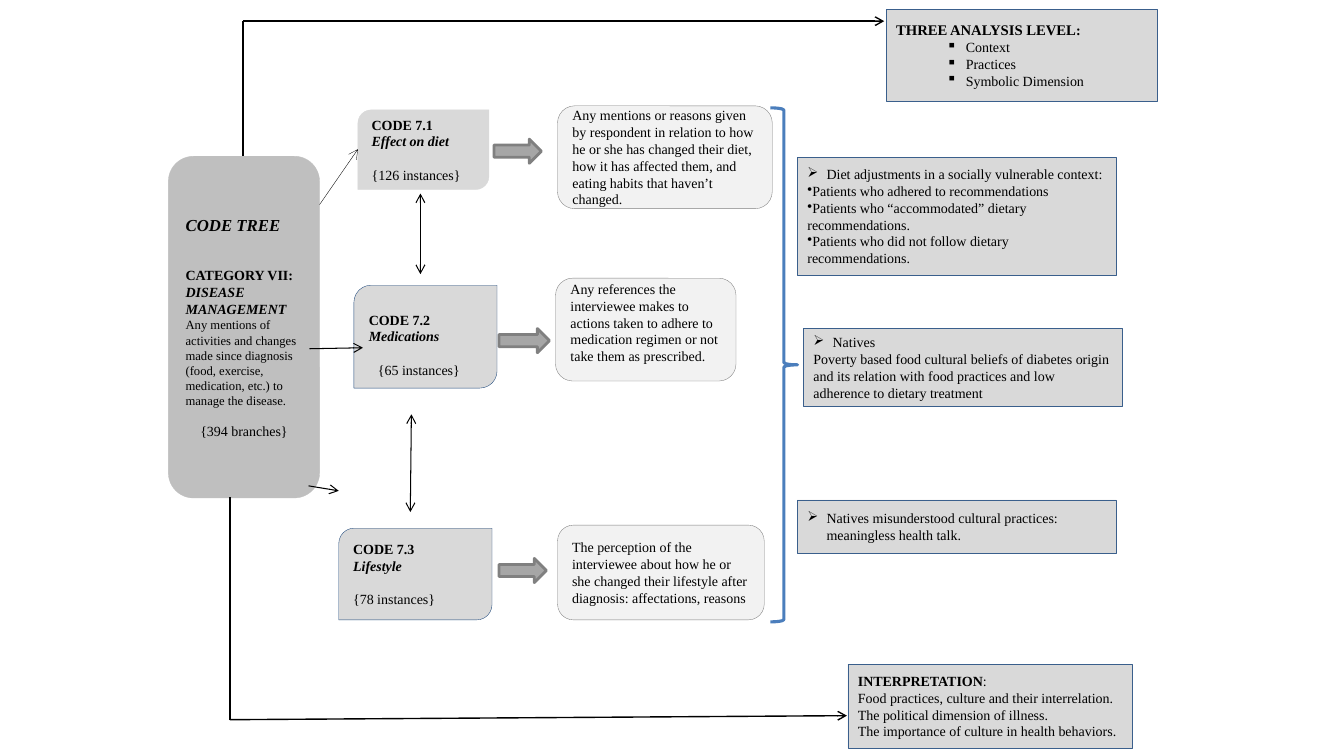
import pptx
import pptx.util
import pptx.dml.color
import pptx.enum.shapes
import pptx.enum.text
import pptx.oxml.ns
from lxml import etree

Inches, Pt, qn = pptx.util.Inches, pptx.util.Pt, pptx.oxml.ns.qn
SHAPE = pptx.enum.shapes.MSO_SHAPE
ALIGN = pptx.enum.text.PP_ALIGN


def paint(shape, line, width, fill=None):
    shape.line.color.rgb = pptx.dml.color.RGBColor.from_string(line)
    shape.line.width = Pt(width)
    if fill:
        shape.fill.solid()
        shape.fill.fore_color.rgb = pptx.dml.color.RGBColor.from_string(fill)
    etree.SubElement(shape._element.spPr, qn("a:effectLst"))


def write(box, text, size=10, bold=False, italic=False, joined=False,
          align=ALIGN.LEFT, before=0, bullet=None, left=0, hanging=0):
    frame = box.text_frame
    paragraph = frame.paragraphs[-1]
    if not joined:
        if paragraph.runs:
            paragraph = frame.add_paragraph()
        paragraph.alignment = align
        paragraph.space_before = Pt(before)
        properties = paragraph._p.get_or_add_pPr()
        properties.set("marL", str(Inches(left)))
        properties.set("indent", str(Inches(-hanging)))
        if bullet:
            etree.SubElement(properties, qn("a:buChar")).set("char", bullet)
    run = paragraph.add_run()
    run.text = text
    run.font.name = "Times New Roman"
    run.font.size = Pt(size)
    run.font.bold, run.font.italic = bold, italic
    run.font.color.rgb = pptx.dml.color.RGBColor.from_string("000000")


deck = pptx.Presentation()
deck.slide_width, deck.slide_height = Inches(13.33), Inches(7.5)
slide = deck.slides.add_slide(deck.slide_layouts[6])

# Boxes
boxes = {}
for part, kind, left, top, width, height, fill, line in [
    ("diet", SHAPE.ROUND_2_DIAG_RECTANGLE, 3.55, 1.09, 1.3, 0.79, "D9D9D9", "D9D9D9"),
    ("medications", SHAPE.ROUND_2_DIAG_RECTANGLE, 3.51, 2.83, 1.42, 1.02, "D9D9D9", "1F497D"),
    ("lifestyle", SHAPE.ROUND_2_DIAG_RECTANGLE, 3.36, 5.24, 1.52, 0.91, "D9D9D9", "1F497D"),
    ("levels", SHAPE.RECTANGLE, 8.79, 0.09, 2.69, 0.91, "D9D9D9", "3A5F8C"),
    ("tree", SHAPE.ROUNDED_RECTANGLE, 1.67, 1.55, 1.5, 3.39, "BFBFBF", "BFBFBF"),
    ("diet meaning", SHAPE.ROUNDED_RECTANGLE, 5.53, 1.05, 2.13, 1.02, "F2F2F2", "808080"),
    ("medications meaning", SHAPE.ROUNDED_RECTANGLE, 5.51, 2.76, 1.79, 1.02, "F2F2F2", "808080"),
    ("lifestyle meaning", SHAPE.ROUNDED_RECTANGLE, 5.53, 5.21, 2.05, 0.94, "F2F2F2", "808080"),
    ("interpretation", SHAPE.RECTANGLE, 8.41, 6.59, 2.82, 0.83, "D9D9D9", "3A5F8C"),
    ("adjustments", SHAPE.RECTANGLE, 7.91, 1.56, 3.16, 1.17, "D9D9D9", "3A5F8C"),
    ("misunderstood", SHAPE.RECTANGLE, 7.91, 4.96, 3.16, 0.53, "D9D9D9", "3A5F8C"),
    ("natives", SHAPE.RECTANGLE, 7.97, 3.26, 3.16, 0.77, "D9D9D9", "3A5F8C"),
]:
    box = slide.shapes.add_shape(kind, Inches(left), Inches(top), Inches(width), Inches(height))
    paint(box, line, 0.25, fill)
    box.text_frame.word_wrap = True
    box.text_frame.vertical_anchor = pptx.enum.text.MSO_ANCHOR.MIDDLE
    boxes[part] = box
boxes["medications"].text_frame.margin_top = Inches(0.21)
boxes["medications meaning"].text_frame.margin_bottom = Inches(0.19)

# Code tree
tree = boxes["tree"]
write(tree, "CODE TREE", size=12, bold=True, italic=True)
write(tree, "CATEGORY VII: ", bold=True, before=23)
write(tree, "DISEASE MANAGEMENT", bold=True, italic=True, joined=True)
write(tree, "Any mentions of activities and changes made since diagnosis", size=9)
write(tree, "(food, exercise, medication, etc.) to manage the disease.", size=9)
write(tree, "{394 branches}", align=ALIGN.CENTER, before=10.5)

# Codes and their meanings
for part, code, title, instances, indent, meaning in [
    ("diet", "CODE 7.1", "Effect on diet", "{126 instances}", 0,
     "Any mentions or reasons given by respondent in relation to how he or she has changed "
     "their diet, how it has affected them, and eating habits that haven’t changed."),
    ("medications", "CODE 7.2", "Medications", "{65 instances}", 0.09,
     "Any references the interviewee makes to actions taken to adhere to medication regimen "
     "or not take them as prescribed."),
    ("lifestyle", "CODE 7.3", "Lifestyle", "{78 instances}", 0,
     "The perception of the interviewee about how he or she changed their lifestyle after "
     "diagnosis: affectations, reasons"),
]:
    write(boxes[part], code, bold=True)
    write(boxes[part], title, bold=True, italic=True)
    write(boxes[part], instances, before=12, left=indent)
    write(boxes[part + " meaning"], meaning)

# Analysis levels
write(boxes["levels"], "THREE ANALYSIS LEVEL", size=10.5, bold=True)
write(boxes["levels"], ":", bold=True, joined=True)
for level in ["Context", "Practices", "Symbolic Dimension"]:
    write(boxes["levels"], level, bullet="▪", left=0.69, hanging=0.19)

# Findings
for part, finding in [
    ("adjustments", "Diet adjustments in a socially vulnerable context:"),
    ("natives", "Natives"),
    ("misunderstood", "Natives misunderstood cultural practices: meaningless health talk."),
]:
    write(boxes[part], finding, bullet="➢", left=0.19, hanging=0.19)
for patients in ["Patients who adhered to recommendations",
                 "Patients who “accommodated” dietary recommendations.",
                 "Patients who did not follow dietary recommendations."]:
    write(boxes["adjustments"], patients, bullet="•")
write(boxes["natives"], "Poverty based food cultural beliefs of diabetes origin and its relation "
      "with food practices and low adherence to dietary treatment")

# Interpretation
write(boxes["interpretation"], "INTERPRETATION", bold=True)
write(boxes["interpretation"], ":", joined=True)
for theme in ["Food practices, culture and their interrelation.",
              "The political dimension of illness.",
              "The importance of culture in health behaviors."]:
    write(boxes["interpretation"], theme)

# Block arrows from code to meaning
for left, top, width in [(4.9, 1.38, 0.47), (4.95, 3.26, 0.5), (4.95, 5.54, 0.47)]:
    block_arrow = slide.shapes.add_shape(
        SHAPE.RIGHT_ARROW, Inches(left), Inches(top), Inches(width), Inches(0.24))
    paint(block_arrow, "808080", 2, "A6A6A6")

# Brace gathering the meanings
brace = slide.shapes.add_shape(
    SHAPE.RIGHT_BRACE, Inches(7.64), Inches(1.07), Inches(0.27), Inches(5.1))
brace.fill.background()
paint(brace, "4B7EBC", 2.25)

# Links between the boxes
for x1, y1, x2, y2, width, ends in [
    (2.41, 1.55, 2.41, 0.21, 1, []),
    (2.41, 0.21, 8.77, 0.21, 1, ["tailEnd"]),
    (3.17, 2.03, 3.55, 1.48, 0.25, ["tailEnd"]),
    (3.07, 3.46, 3.6, 3.45, 0.75, ["tailEnd"]),
    (3.06, 4.82, 3.36, 4.87, 0.75, ["tailEnd"]),
    (4.17, 1.92, 4.17, 2.72, 0.75, ["headEnd", "tailEnd"]),
    (4.08, 4.11, 4.07, 5.08, 0.75, ["headEnd", "tailEnd"]),
    (2.28, 7.14, 2.28, 4.93, 1, []),
    (2.28, 7.14, 8.4, 7.1, 1, ["tailEnd"]),
]:
    link = slide.shapes.add_connector(
        pptx.enum.shapes.MSO_CONNECTOR.STRAIGHT, Inches(x1), Inches(y1), Inches(x2), Inches(y2))
    paint(link, "000000", width)
    for end in ends:
        etree.SubElement(link._element.spPr.find(qn("a:ln")), qn("a:" + end)).set("type", "arrow")

deck.save("out.pptx")
